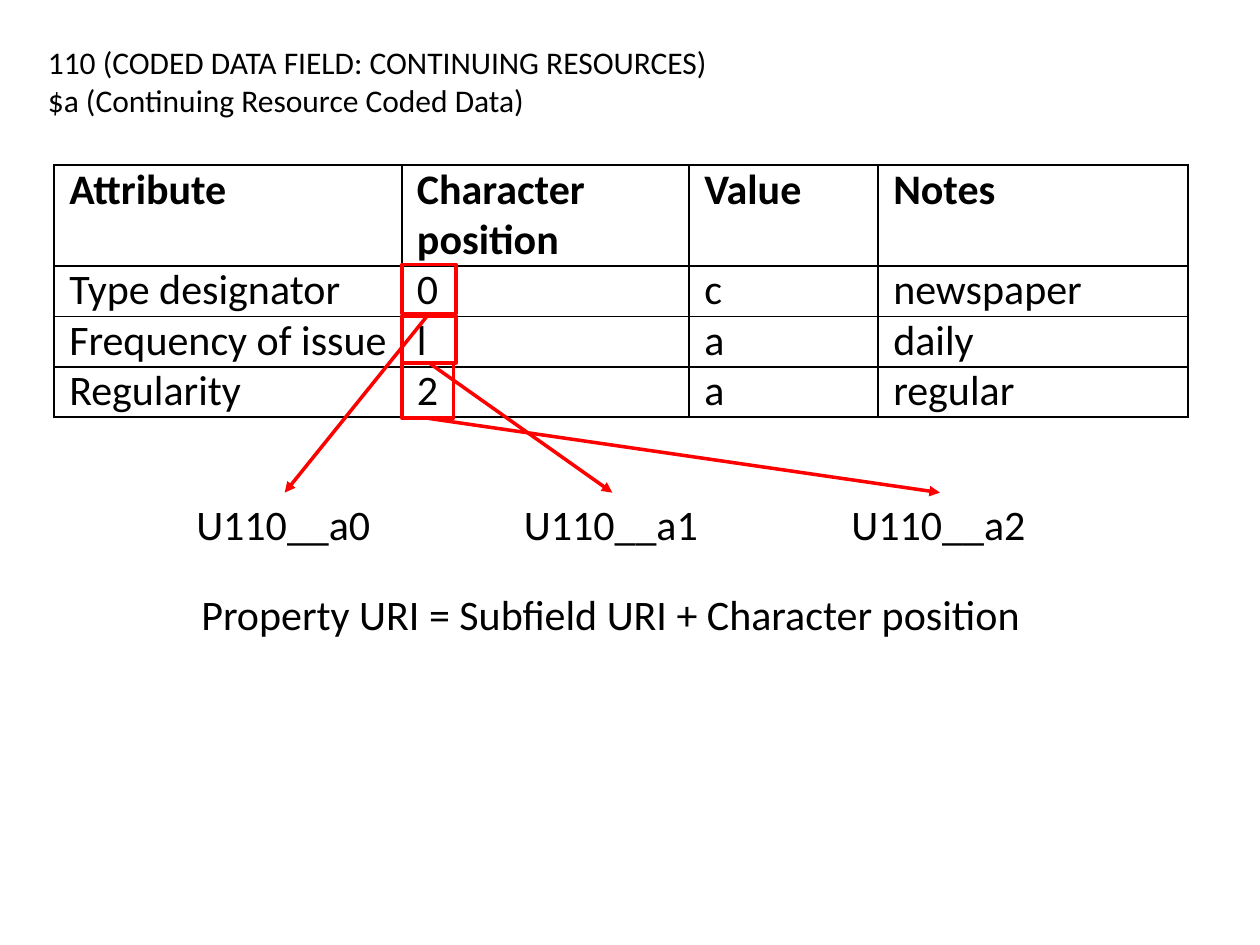
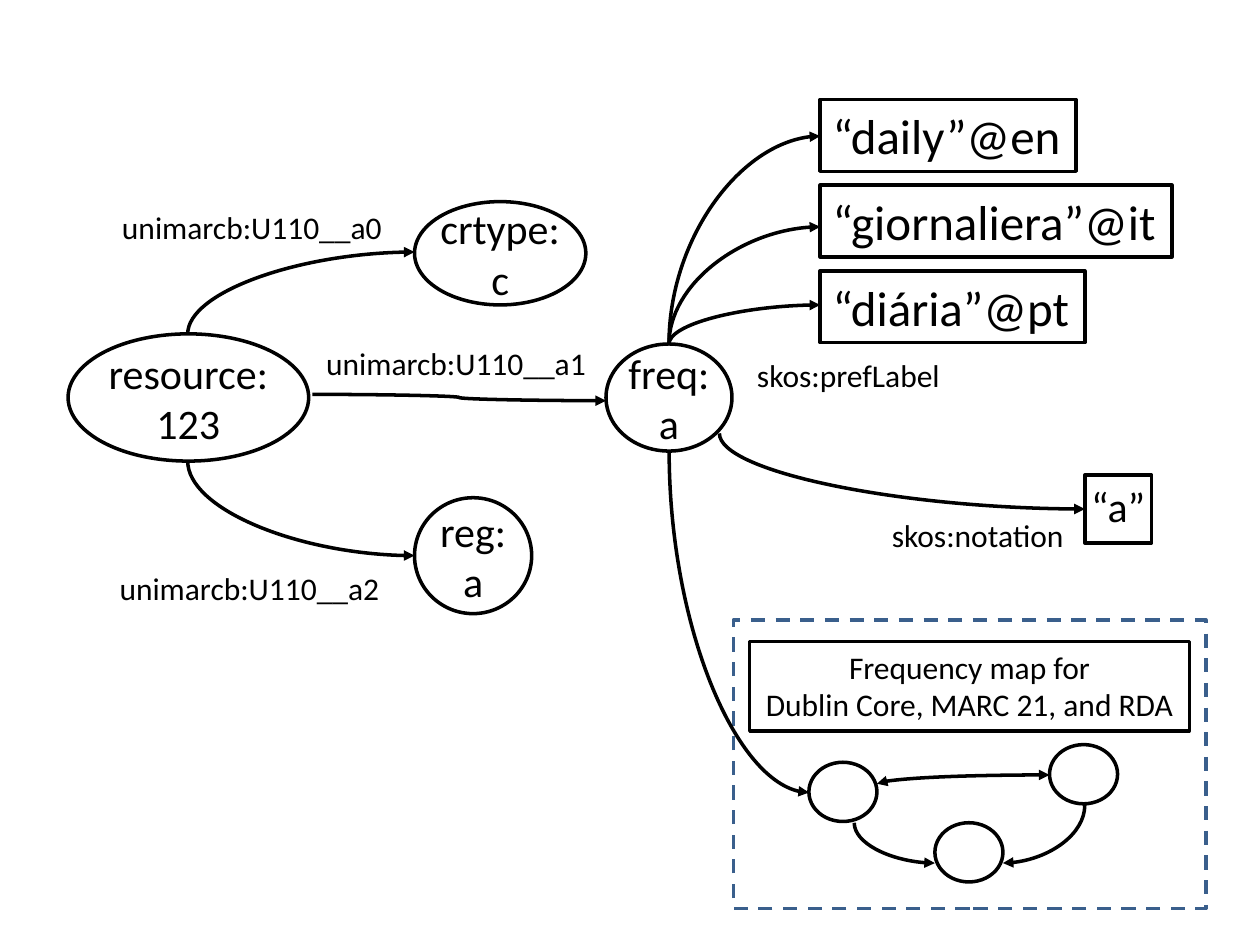
from dataclasses import dataclass

import pptx
import pptx.dml.color
import pptx.enum.dml
import pptx.enum.shapes
import pptx.enum.text
import pptx.oxml.ns
import pptx.util
from lxml import etree

Inches, Pt = pptx.util.Inches, pptx.util.Pt
RGB = pptx.dml.color.RGBColor.from_string
SHAPE = pptx.enum.shapes.MSO_SHAPE
LINE = pptx.enum.shapes.MSO_CONNECTOR
ALIGN = pptx.enum.text.PP_ALIGN
ANCHOR = pptx.enum.text.MSO_ANCHOR
qn = pptx.oxml.ns.qn


@dataclass(frozen=True)
class Theme:
    font: str = "Calibri"
    ink: str = "000000"
    paper: str = "FFFFFF"
    mark: str = "FF0000"
    frame: str = "3A5F8C"
    small: int = 18
    medium: int = 24
    large: int = 28
    stroke: int = 2
    border: int = 1


T = Theme()

# Slide 1: from coded data to properties
HEADING = ["110 (CODED DATA FIELD: CONTINUING RESOURCES)",
           "$a (Continuing Resource Coded Data)"]
ROWS = [("Attribute", "Character position", "Value", "Notes"),
        ("Type designator", "0", "c", "newspaper"),
        ("Frequency of issue", "l", "a", "daily"),
        ("Regularity", "2", "a", "regular")]
COL_WIDTHS = [2.76, 2.28, 1.5, 2.46]
ROW_HEIGHTS = [0.8, 0.4, 0.4, 0.4]
TABLE_AT = (0.43, 1.31)
POSITION_MARKS = [(3.19, 2.1, 0.43, 0.39), (3.19, 2.51, 0.43, 0.37),
                  (3.19, 2.88, 0.41, 0.44)]
PROPERTIES = ["U110__a0", "U110__a1", "U110__a2"]
PROPERTY_AT, PROPERTY_STEP = (1.46, 3.91, 1.6, 0.5), 2.6
RULE = "Property URI = Subfield URI + Character position"
RULE_AT = (1.5, 4.62, 6.76, 0.5)

# Slide 2: the resource as a graph
NODES = [(["resource:", "123"], (0.54, 2.65, 1.91, 1.01)),
         (["freq:", "a"], (4.81, 2.73, 1, 0.85)),
         (["crtype:", "c"], (3.29, 1.6, 1.36, 0.82)),
         (["reg:", "a"], (3.29, 3.95, 0.93, 0.92))]
EDGE_LABELS = [("unimarcb:U110__a0", (0.87, 1.6, 2.36, 0.4)),
               ("unimarcb:U110__a1", (2.49, 2.68, 2.36, 0.4)),
               ("unimarcb:U110__a2", (0.85, 4.47, 2.38, 0.4)),
               ("skos:prefLabel", (5.91, 2.78, 1.73, 0.4)),
               ("skos:notation", (6.98, 4.05, 1.63, 0.4))]
LITERALS = [("“daily”@en", 2.03), ("“giornaliera”@it", 2.79), ("“diária”@pt", 2.1)]
LITERAL_AT, LITERAL_STEP, LITERAL_HEIGHT = (6.51, 0.79), 0.68, 0.57
NOTATION, NOTATION_AT = "“a”", (8.61, 3.77, 0.53, 0.54)
STRAIGHT_EDGE = ((2.48, 3.13), (4.81, 3.18))
BENT_EDGES = [((1.49, 3.66), (3.29, 4.41)), ((1.49, 2.65), (3.29, 2)),
              ((5.31, 2.73), (6.51, 1.08)), ((5.31, 2.73), (6.51, 1.8)),
              ((5.31, 2.73), (6.51, 2.42)), ((5.71, 3.44), (8.61, 4.04)),
              ((5.31, 3.58), (6.42, 6.29))]
MAP_FRAME = (5.82, 4.92, 3.75, 2.29)
MAP_TITLE = ["Frequency map for", "Dublin Core, MARC 21, and RDA"]
MAP_TITLE_AT = (5.95, 5.09, 3.49, 0.71)
MAP_NODES = [(6.42, 6.05), (8.33, 5.91), (7.42, 6.53)]
MAP_NODE_SIZE = (0.54, 0.47)
MAP_LINK = ((6.96, 6.22), (8.33, 6.15))
MAP_EDGES = [((6.78, 6.53), (7.42, 6.85)), ((8.61, 6.39), (7.96, 6.85))]


def inches(values):
    return [Inches(v) for v in values]


def write(tf, lines, size, align=ALIGN.LEFT, bold=False):
    for i, line in enumerate(lines):
        p = tf.paragraphs[0] if i == 0 else tf.add_paragraph()
        p.alignment = align
        r = p.add_run()
        r.text = line
        r.font.name, r.font.size, r.font.bold = T.font, Pt(size), bold
        r.font.color.rgb = RGB(T.ink)


def add_label(s, text, at, size, wrap=True):
    box = s.shapes.add_textbox(*inches(at))
    box.text_frame.word_wrap = wrap
    write(box.text_frame, [text], size)
    return box


def add_outline(shapes, kind, at, color=T.ink, fill=None):
    sp = shapes.add_shape(kind, *inches(at))
    sp.shadow.inherit = False
    if fill:
        sp.fill.solid()
        sp.fill.fore_color.rgb = RGB(fill)
    else:
        sp.fill.background()
    sp.line.color.rgb, sp.line.width = RGB(color), Pt(T.stroke)
    sp.text_frame.vertical_anchor = ANCHOR.TOP
    return sp


def set_margins(tf, gap):
    tf.margin_left = tf.margin_right = tf.margin_top = tf.margin_bottom = Inches(gap)


def add_arrow(shapes, kind, begin, end, color=T.ink, both_ends=False):
    arrow = shapes.add_connector(kind, *inches((*begin, *end)))
    arrow.line.color.rgb, arrow.line.width = RGB(color), Pt(T.stroke)
    ln = arrow.line._get_or_add_ln()
    for tag in ("a:headEnd", "a:tailEnd") if both_ends else ("a:tailEnd",):
        etree.SubElement(ln, qn(tag), type="triangle")
    etree.SubElement(arrow._element.spPr, qn("a:effectLst"))
    return arrow


def add_bent_arrow(shapes, begin, end, both_ends=False):
    """Quarter curve that leaves vertically and arrives horizontally."""
    (x1, y1), (x2, y2) = begin, end
    cx, cy = (x1 + x2) / 2, (y1 + y2) / 2
    half_x, half_y = (x2 - x1) / 2, (y2 - y1) / 2
    # The preset leaves horizontally, so lay it out on its side and turn it.
    arrow = add_arrow(shapes, LINE.CURVE, (cx + half_y, cy - half_x),
                      (cx - half_y, cy + half_x), both_ends=both_ends)
    spPr = arrow._element.spPr
    spPr.find(qn("a:xfrm")).set("rot", str(270 * 60000))
    spPr.find(qn("a:prstGeom")).set("prst", "curvedConnector2")


def set_borders(cell):
    tcPr = cell._tc.get_or_add_tcPr()
    for i, side in enumerate(("a:lnL", "a:lnR", "a:lnT", "a:lnB")):
        ln = etree.Element(qn(side), w=str(Pt(T.border)))
        fill = etree.SubElement(ln, qn("a:solidFill"))
        etree.SubElement(fill, qn("a:srgbClr"), val=T.ink)
        tcPr.insert(i, ln)


def add_code_table(s):
    frame = s.shapes.add_table(len(ROWS), len(COL_WIDTHS), *inches(
        (*TABLE_AT, sum(COL_WIDTHS), sum(ROW_HEIGHTS))))
    table = frame.table
    for col, width in zip(table.columns, COL_WIDTHS):
        col.width = Inches(width)
    for i, texts in enumerate(ROWS):
        table.rows[i].height = Inches(ROW_HEIGHTS[i])
        for j, text in enumerate(texts):
            cell = table.cell(i, j)
            set_margins(cell, 0)
            cell.margin_left = Inches(0.12)
            cell.fill.background()
            set_borders(cell)
            write(cell.text_frame, [text], T.medium, bold=i == 0)
            cell.text_frame.paragraphs[0].line_spacing = Pt(28.8)


def build_coded_data(prs):
    s = prs.slides.add_slide(prs.slide_layouts[5])
    title = s.shapes.title
    title.left, title.top, title.width, title.height = inches((0.28, 0.29, 5.9, 0.71))
    tf = title.text_frame
    tf.auto_size = pptx.enum.text.MSO_AUTO_SIZE.NONE
    tf.vertical_anchor = ANCHOR.TOP
    write(tf, HEADING, T.small)
    add_code_table(s)
    add_label(s, RULE, RULE_AT, T.medium, wrap=False)
    left, top, width, height = PROPERTY_AT
    for i, (name, mark_at) in enumerate(zip(PROPERTIES, POSITION_MARKS)):
        label = add_label(s, name, (left + i * PROPERTY_STEP, top, width, height),
                          T.medium, wrap=False)
        mark = add_outline(s.shapes, SHAPE.RECTANGLE, mark_at, T.mark)
        arrow = add_arrow(s.shapes, LINE.STRAIGHT, mark_at[:2], (left, top), T.mark)
        arrow.begin_connect(mark, 2)
        arrow.end_connect(label, 0)


def add_frequency_map(s):
    shapes = s.shapes.add_group_shape().shapes
    frame = add_outline(shapes, SHAPE.RECTANGLE, MAP_FRAME, T.frame)
    frame.line.dash_style = pptx.enum.dml.MSO_LINE.DASH
    heading = add_outline(shapes, SHAPE.RECTANGLE, MAP_TITLE_AT)
    write(heading.text_frame, MAP_TITLE, T.small, ALIGN.CENTER)
    for corner in MAP_NODES:
        add_outline(shapes, SHAPE.OVAL, (*corner, *MAP_NODE_SIZE))
    add_bent_arrow(shapes, *MAP_LINK, both_ends=True)
    for begin, end in MAP_EDGES:
        add_bent_arrow(shapes, begin, end)


def build_graph(prs):
    s = prs.slides.add_slide(prs.slide_layouts[6])
    for lines, at in NODES:
        node = add_outline(s.shapes, SHAPE.OVAL, at, fill=T.paper)
        tf = node.text_frame
        set_margins(tf, 0)
        tf.vertical_anchor = ANCHOR.MIDDLE
        write(tf, lines, T.medium, ALIGN.CENTER)
    for text, at in EDGE_LABELS:
        add_label(s, text, at, T.small)
    left, top = LITERAL_AT
    for i, (text, width) in enumerate(LITERALS):
        box = add_outline(s.shapes, SHAPE.RECTANGLE,
                          (left, top + i * LITERAL_STEP, width, LITERAL_HEIGHT))
        box.text_frame.word_wrap = False
        write(box.text_frame, [text], T.large)
    box = add_outline(s.shapes, SHAPE.RECTANGLE, NOTATION_AT)
    set_margins(box.text_frame, 0.04)
    box.text_frame.word_wrap = False
    write(box.text_frame, [NOTATION], T.medium, ALIGN.CENTER)
    add_frequency_map(s)
    add_arrow(s.shapes, LINE.CURVE, *STRAIGHT_EDGE)
    for begin, end in BENT_EDGES:
        add_bent_arrow(s.shapes, begin, end)


def main():
    prs = pptx.Presentation()
    prs.slide_width, prs.slide_height = Inches(10), Inches(7.5)
    build_coded_data(prs)
    build_graph(prs)
    prs.save("out.pptx")


if __name__ == "__main__":
    main()
